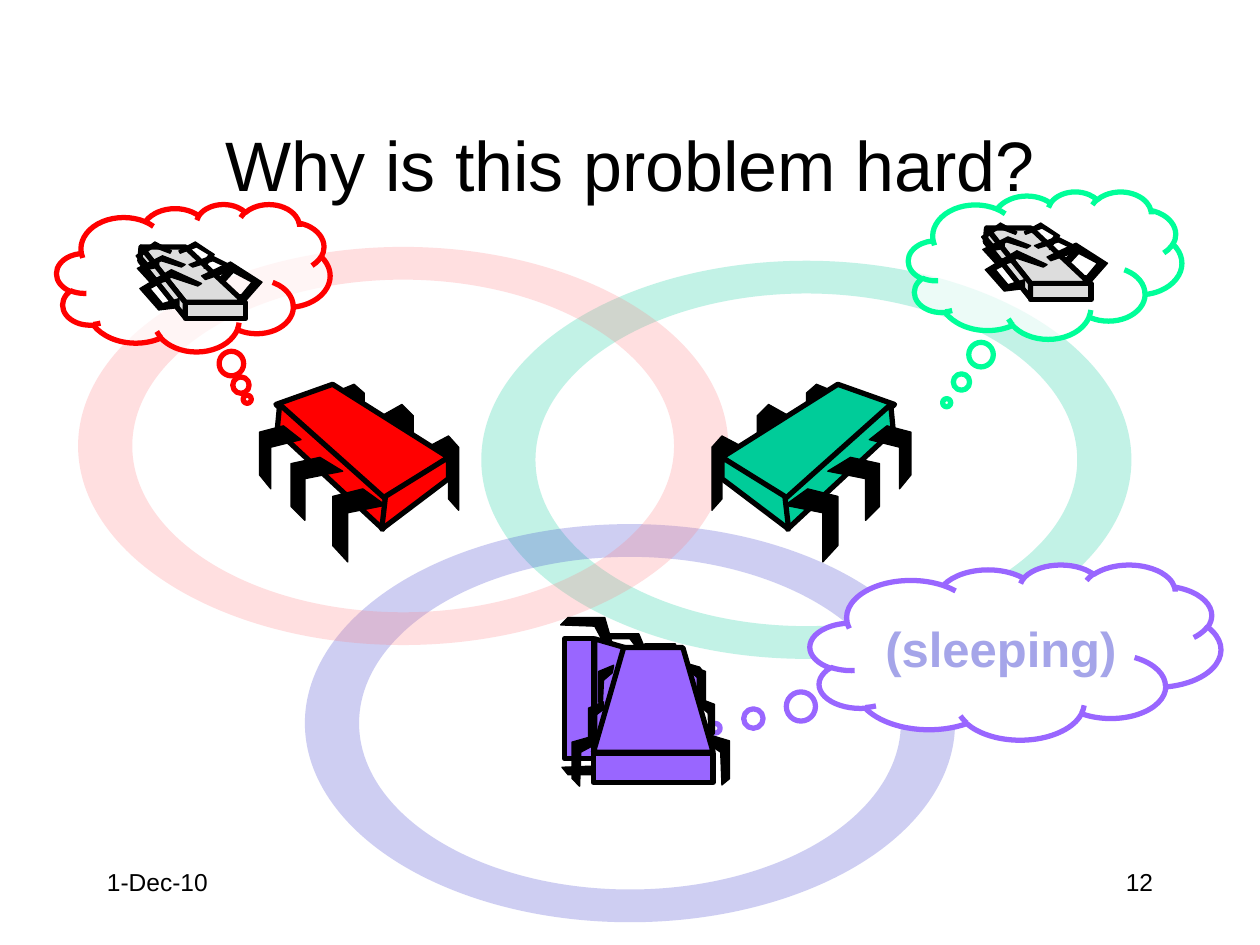
"""Build the slide "Why is this problem hard?" with three robots and their thoughts."""
from lxml.etree import SubElement
from pptx import Presentation
from pptx.dml.color import RGBColor
from pptx.enum.shapes import MSO_SHAPE as Shape
from pptx.enum.text import MSO_ANCHOR as Anchor, PP_ALIGN as Align
from pptx.oxml.ns import qn
from pptx.util import Inches, Pt

THEME = {
    "font": "Arial", "title": 40, "thought": 28, "footer": 14,
    "ink": "000000", "paper": "FFFFFF", "metal": "DDDDDD", "muted": "A5A5E9",
    "red": "FF0000", "pink": "FF7C80", "green": "00CC99", "mint": "00FF99",
    "blue": "3333CC", "violet": "9966FF",
    "thick": 3, "thin": 0.75, "ring_alpha": 24, "cloud_alpha": 70,
}

TITLE = "Why is this problem hard?"
SLEEPING = "(sleeping)"
DATE, PAGE = "1-Dec-10", "12"

RINGS = [((6.4, 3.65), "green"), ((5, 5.74), "blue"), ((3.2, 3.54), "pink")]
RING_OUTER, RING_INNER = (2.58, 1.58), (2.15, 1.32)
FULL_TURN = 21600000

SPIDER = [
    ("leg", [(3.39, 3.55), (3.56, 3.46), (3.64, 3.55), (3.64, 4.05), (3.56, 3.96), (3.56, 3.63), (3.39, 3.71)]),
    ("leg", [(3.03, 3.3), (3.19, 3.21), (3.28, 3.3), (3.28, 3.8), (3.19, 3.71), (3.19, 3.38), (3.03, 3.46)]),
    ("leg", [(2.64, 3.12), (2.81, 3.05), (2.89, 3.12), (2.89, 3.55), (2.81, 3.47), (2.81, 3.19), (2.64, 3.26)]),
    ("body", [(2.64, 3.05), (3.56, 3.63), (3.04, 3.97), (2.19, 3.21)]),
    ("body", [(2.22, 3.21), (3.06, 3.96), (3.04, 4.2), (2.2, 3.42)]),
    ("body", [(3.56, 3.63), (3.56, 3.8), (3.03, 4.2), (3.06, 3.94)]),
    ("leg", [(2.88, 3.88), (3.06, 4.01), (2.76, 4.07), (2.76, 4.46), (2.64, 4.33), (2.64, 3.94)]),
    ("leg", [(2.54, 3.63), (2.72, 3.74), (2.42, 3.8), (2.42, 4.13), (2.31, 4.02), (2.31, 3.68)]),
    ("leg", [(2.25, 3.38), (2.39, 3.49), (2.15, 3.55), (2.15, 3.88), (2.06, 3.77), (2.06, 3.43)]),
]
IMAGINED = [
    ("body", [(1.12, 1.96), (1.47, 2.4), (1.94, 2.4), (1.47, 1.96)]),
    ("slab", [(1.47, 2.4), (1.95, 2.53)]),
    ("body", [(1.12, 1.96), (1.11, 2.07), (1.47, 2.52), (1.47, 2.4)]),
    ("leg", [(1.42, 2.37), (1.42, 2.44), (1.26, 2.46), (1.11, 2.29), (1.36, 2.14), (1.6, 2.25),
             (1.57, 2.27), (1.36, 2.2), (1.19, 2.29), (1.29, 2.41)]),
    ("leg", [(1.33, 2.18), (1.33, 2.23), (1.2, 2.25), (1.09, 2.13), (1.29, 2.03), (1.47, 2.1),
             (1.44, 2.12), (1.28, 2.07), (1.15, 2.13), (1.23, 2.21)]),
    ("leg", [(1.26, 2.08), (1.26, 2.12), (1.16, 2.14), (1.08, 2.03), (1.23, 1.92), (1.36, 1.99),
             (1.35, 2.01), (1.22, 1.96), (1.12, 2.03), (1.18, 2.1)]),
    ("leg", [(1.72, 2.18), (1.74, 2.22), (1.77, 2.25), (1.88, 2.13), (1.68, 2.03), (1.5, 2.1),
             (1.53, 2.12), (1.69, 2.07), (1.82, 2.13), (1.74, 2.21)]),
    ("leg", [(1.6, 2.07), (1.66, 2.12), (1.62, 2.13), (1.7, 2.02), (1.55, 1.92), (1.42, 1.99),
             (1.43, 2.01), (1.56, 1.96), (1.66, 2.02), (1.6, 2.1)]),
    ("leg", [(1.91, 2.37), (1.89, 2.36), (1.89, 2.39), (1.93, 2.41), (2.08, 2.24), (1.83, 2.08),
             (1.6, 2.19), (1.63, 2.22), (1.83, 2.15), (2, 2.24), (1.9, 2.36), (1.91, 2.34), (1.88, 2.34)]),
]
SLEEPER = [
    ("leg", [(5.59, 5.82), (5.79, 5.88), (5.79, 6.18), (5.73, 6.23), (5.72, 5.97), (5.6, 5.89)]),
    ("leg", [(5.54, 5.54), (5.67, 5.59), (5.67, 5.82), (5.63, 5.87), (5.62, 5.66), (5.55, 5.6)]),
    ("leg", [(4.75, 5.83), (4.54, 5.89), (4.54, 6.18), (4.6, 6.24), (4.61, 5.97), (4.74, 5.9)]),
    ("leg", [(4.79, 5.57), (4.67, 5.62), (4.67, 5.85), (4.71, 5.89), (4.71, 5.69), (4.79, 5.63)]),
    ("body", [(4.71, 5.97), (4.95, 5.14), (5.42, 5.14), (5.66, 5.97)]),
    ("slab", [(4.71, 5.98), (5.66, 6.21)]),
    ("leg", [(5.48, 5.28), (5.6, 5.33), (5.6, 5.57), (5.57, 5.61), (5.56, 5.4), (5.49, 5.34)]),
    ("leg", [(4.87, 5.28), (4.75, 5.33), (4.75, 5.57), (4.78, 5.61), (4.79, 5.4), (4.86, 5.34)]),
]


def same(x, y):
    return x, y


def mirrored(x, y):
    return 9.29 - x, y


def shifted(x, y):
    return x + 6.71, y - 0.15


def quarter_turned(x, y):
    return 10.69 - y, x + 0.36


def rgb(name):
    return RGBColor.from_string(THEME[name])


def paint(shape, fill, line=None, width=0, alpha=100):
    shape.shadow.inherit = False
    shape.fill.solid()
    shape.fill.fore_color.rgb = rgb(fill)
    if alpha < 100:
        color = shape._element.spPr.find(qn("a:solidFill"))[0]
        SubElement(color, qn("a:alpha"), val=str(alpha * 1000))
    if line:
        shape.line.color.rgb = rgb(line)
        shape.line.width = Pt(width)
    else:
        shape.line.fill.background()


def write(shape, text, size, color="ink", align=Align.LEFT, anchor=Anchor.TOP, bold=False):
    frame = shape.text_frame
    frame.word_wrap = True
    frame.vertical_anchor = anchor
    paragraph = frame.paragraphs[0]
    paragraph.alignment = align
    run = paragraph.add_run()
    run.text = text
    run.font.name = THEME["font"]
    run.font.size = Pt(THEME[size])
    run.font.bold = bold
    run.font.color.rgb = rgb(color)


def outline(shapes, points):
    start, *rest = [(Inches(x), Inches(y)) for x, y in points]
    builder = shapes.build_freeform(*start)
    builder.add_line_segments(rest, close=True)
    return builder.convert_to_shape()


def add_ring(shapes, center, color):
    (x, y), (rx, ry) = center, RING_OUTER
    ring = outline(shapes, [(x - rx, y - ry), (x + rx, y - ry), (x + rx, y + ry), (x - rx, y + ry)])
    trace = next(ring._element.iter(qn("a:path")))
    for step in list(trace):
        trace.remove(step)
    for (across, down), turn in ((RING_OUTER, FULL_TURN), (RING_INNER, -FULL_TURN)):
        move = SubElement(trace, qn("a:moveTo"))
        SubElement(move, qn("a:pt"), x=str(Inches(rx - across)), y=str(Inches(ry)))
        SubElement(trace, qn("a:arcTo"), wR=str(Inches(across)), hR=str(Inches(down)),
                   stAng=str(FULL_TURN // 2), swAng=str(turn))
        SubElement(trace, qn("a:close"))
    paint(ring, color, alpha=THEME["ring_alpha"])


def add_robot(shapes, parts, color, place=same):
    for kind, points in parts:
        spots = [place(x, y) for x, y in points]
        if kind == "slab":
            (left, right), (top, bottom) = (sorted(axis) for axis in zip(*spots))
            part = shapes.add_shape(Shape.RECTANGLE, *map(Inches, (left, top, right - left, bottom - top)))
        else:
            part = outline(shapes, spots)
        if kind == "leg":
            paint(part, "ink", "ink", THEME["thin"])
        else:
            paint(part, color, "ink", THEME["thick"])


def add_thought(shapes, box, tail, line, alpha=100):
    cloud = shapes.add_shape(Shape.CLOUD_CALLOUT, *map(Inches, box))
    cloud.adjustments[0], cloud.adjustments[1] = tail
    paint(cloud, "paper", line, THEME["thick"], alpha)
    return cloud


def add_footer(shapes, left, text, align):
    box = shapes.add_textbox(*map(Inches, (left, 6.83, 2.08, 0.5)))
    write(box, text, "footer", align=align)


def main():
    deck = Presentation()
    deck.slide_width, deck.slide_height = Inches(10), Inches(7.5)
    shapes = deck.slides.add_slide(deck.slide_layouts[5]).shapes

    title = shapes.title
    title.left, title.top, title.width, title.height = map(Inches, (0.75, 0.67, 8.5, 1.25))
    write(title, TITLE, "title", align=Align.CENTER, anchor=Anchor.MIDDLE)

    for center, color in RINGS:
        add_ring(shapes, center, color)
    for color, place in (("red", same), ("green", mirrored)):
        add_robot(shapes.add_group_shape().shapes, SPIDER, color, place)

    sleeping = add_thought(shapes, (6.43, 4.48, 3.26, 1.39), (-0.731, 0.435), "violet")
    write(sleeping, SLEEPING, "thought", "muted", Align.CENTER, Anchor.MIDDLE, bold=True)
    for box, tail, line, place in (
        ((0.45, 1.62, 2.17, 1.17), (0.197, 0.824), "red", same),
        ((7.21, 1.52, 2.17, 1.17), (-0.36, 0.933), "mint", shifted),
    ):
        dream = shapes.add_group_shape().shapes
        add_thought(dream, box, tail, line, THEME["cloud_alpha"])
        add_robot(dream, IMAGINED, "metal", place)

    for place in (quarter_turned, same):
        add_robot(shapes.add_group_shape().shapes, SLEEPER, "violet", place)
    add_footer(shapes, 0.75, DATE, Align.LEFT)
    add_footer(shapes, 7.17, PAGE, Align.RIGHT)
    deck.save("out.pptx")


if __name__ == "__main__":
    main()
